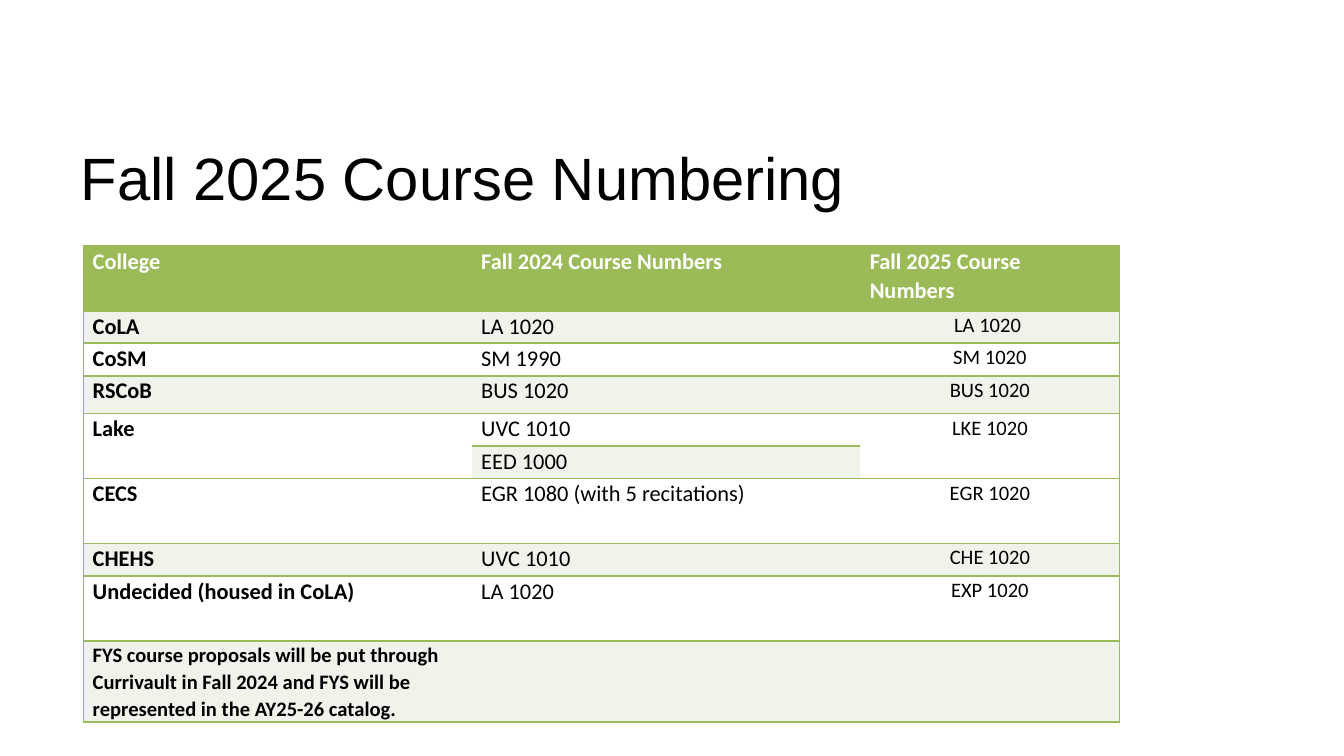
from dataclasses import dataclass

from lxml import etree
from pptx import Presentation
from pptx import util as u
from pptx.dml.color import RGBColor
from pptx.enum import text
from pptx.oxml import ns


@dataclass(frozen=True)
class Theme:
    ink: str = "000000"
    paper: str = "FFFFFF"
    accent: str = "9BBB59"
    band: str = "EFF3EA"
    title_font: str = "Arial"
    table_font: str = "Calibri"
    title_size: int = 32
    cell_size: int = 12
    small_size: int = 11
    border: int = 1


WIDTH = 10
HEIGHT = WIDTH * 9 / 16


class Deck:
    """Holds the theme and the current slide; lengths are shares of the slide."""

    def __init__(self, theme):
        self.theme = theme
        self.prs = Presentation()
        self.prs.slide_width, self.prs.slide_height = u.Inches(WIDTH), u.Inches(HEIGHT)
        self.s = self.prs.slides.add_slide(self.prs.slide_layouts[0])

    def box(self, x, y, w, h):
        sw, sh = self.prs.slide_width, self.prs.slide_height
        return round(x * sw), round(y * sh), round(w * sw), round(h * sh)

    def font(self, p, name, size, color, bold=False):
        p.font.name, p.font.size, p.font.bold = name, u.Pt(size), bold
        p.font.color.rgb = RGBColor.from_string(color)

    def title(self, words, *place):
        sp = self.s.shapes.title
        for other in list(self.s.placeholders):
            if other.shape_id != sp.shape_id:
                other.element.getparent().remove(other.element)
        sp.left, sp.top, sp.width, sp.height = self.box(*place)
        tf = sp.text_frame
        tf.text = words
        tf.vertical_anchor = text.MSO_ANCHOR.TOP
        tf.margin_left = tf.margin_right = u.Inches(0.1)
        tf.margin_top = tf.margin_bottom = u.Inches(0.05)
        p = tf.paragraphs[0]
        p.alignment = text.PP_ALIGN.LEFT
        self.font(p, self.theme.title_font, self.theme.title_size, self.theme.ink)

    def borders(self, cell, sides):
        """Draw the given sides (letters of LRTB) and clear the others."""
        tc_pr = cell._tc.get_or_add_tcPr()
        for side in "LRTB":
            ln = etree.SubElement(tc_pr, ns.qn(f"a:ln{side}"))
            if side in sides:
                ln.set("w", str(u.Pt(self.theme.border)))
                fill = etree.SubElement(ln, ns.qn("a:solidFill"))
                etree.SubElement(fill, ns.qn("a:srgbClr"), val=self.theme.accent)
            else:
                etree.SubElement(ln, ns.qn("a:noFill"))

    def cell(self, cell, words, fill, sides, size, color, bold, align):
        self.borders(cell, sides)
        cell.fill.solid()
        cell.fill.fore_color.rgb = RGBColor.from_string(fill)
        cell.margin_left = cell.margin_right = u.Inches(0.07)
        cell.margin_top = cell.margin_bottom = 0
        if not words:
            return
        cell.text = words
        p = cell.text_frame.paragraphs[0]
        p.alignment, p.line_spacing, p.space_after = align, 1.07, u.Pt(8)
        self.font(p, self.theme.table_font, size, color, bold)

    def table(self, rows, col_weights, row_weights, banded, merges, *place):
        t = self.theme
        x, y, w, h = self.box(*place)
        table = self.s.shapes.add_table(len(rows), len(col_weights), x, y, w, h).table
        table.first_row = table.horz_banding = False
        for col, weight in zip(table.columns, col_weights):
            col.width = round(w * weight / sum(col_weights))
        for row, weight in zip(table.rows, row_weights):
            row.height = round(h * weight / sum(row_weights))
        for first, last in merges:
            table.cell(*first).merge(table.cell(*last))

        end = len(col_weights) - 1
        for i, row in enumerate(rows):
            head, note = i == 0, i == len(rows) - 1
            fill = t.accent if head else t.band if i in banded else t.paper
            for j, words in enumerate(row):
                cell = table.cell(i, j)
                if cell.is_spanned:
                    continue
                sides = "TB" + "L" * (j == 0) + "R" * (j == end)
                right = j == end and not head
                self.cell(
                    cell, words, fill, sides,
                    size=t.small_size if right or note else t.cell_size,
                    color=t.paper if head else t.ink,
                    bold=head or j == 0,
                    align=text.PP_ALIGN.CENTER if right else text.PP_ALIGN.LEFT,
                )


COURSES = [
    ("College", "Fall 2024 Course Numbers", "Fall 2025 Course Numbers"),
    ("CoLA", "LA 1020", "LA 1020 "),
    ("CoSM", "SM 1990", "SM 1020"),
    ("RSCoB", "BUS 1020", "BUS 1020"),
    ("Lake", "UVC 1010", "LKE 1020"),
    ("", "EED 1000", ""),
    ("CECS", "EGR 1080 (with 5 recitations)", "EGR 1020"),
    ("CHEHS", "UVC 1010", "CHE 1020"),
    ("Undecided (housed in CoLA)", "LA 1020", "EXP 1020"),
    ("FYS course proposals will be put through Currivault in Fall 2024 "
     "and FYS will be represented in the AY25-26 catalog.", "", ""),
]


def main():
    deck = Deck(Theme())
    deck.title("Fall 2025 Course Numbering", 0.05, 1 / HEIGHT, 0.875, 1.21 / HEIGHT)
    deck.table(
        COURSES,
        (3, 3, 2),
        (2, 1, 1, 1.17, 1, 1, 2, 1, 2, 2.4),
        {1, 3, 5, 7, 9},
        [((4, 0), (5, 0)), ((4, 2), (5, 2))],
        0.062, 1.83 / HEIGHT, 0.771, 3.52 / HEIGHT,
    )
    deck.prs.save("out.pptx")


if __name__ == "__main__":
    main()
